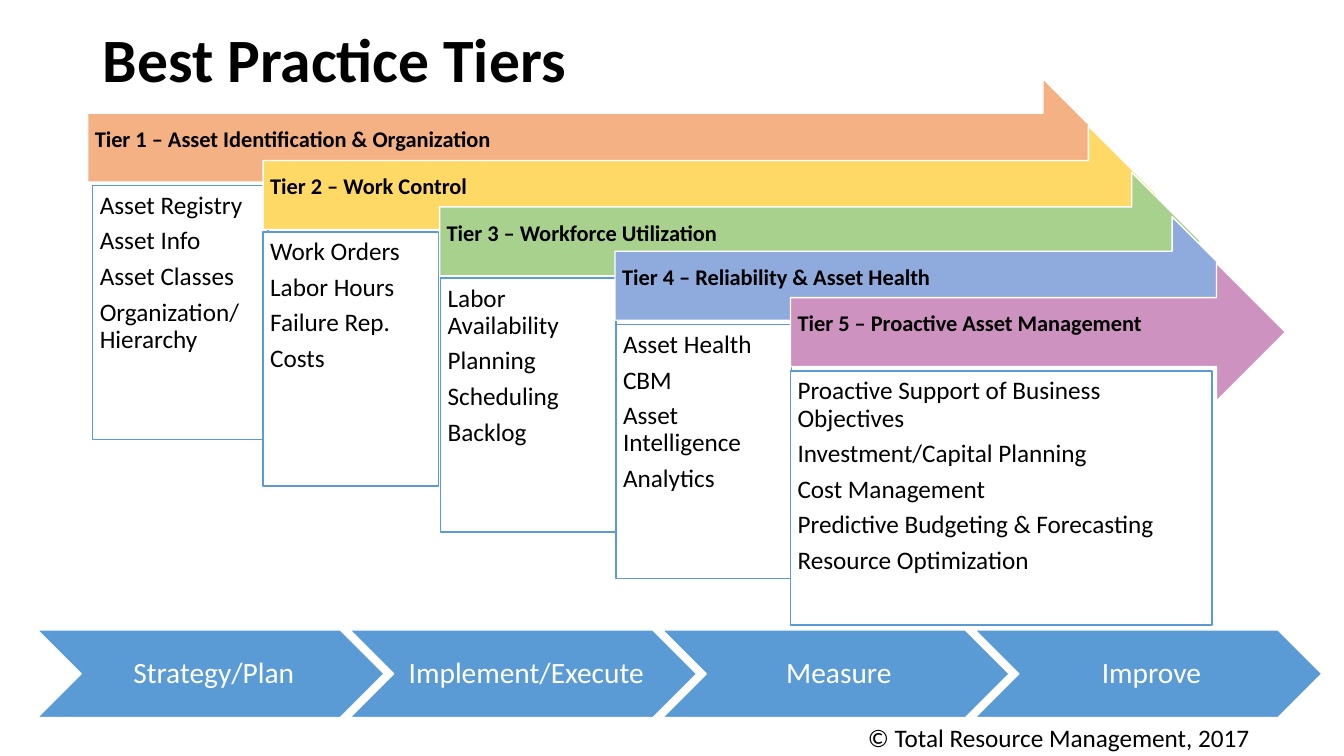
from pptx import Presentation
from pptx.dml.color import RGBColor
from pptx.enum.shapes import MSO_SHAPE as SHAPE
from pptx.enum.text import MSO_ANCHOR as ANCHOR, PP_ALIGN as ALIGN
from pptx.util import Inches, Pt

BLACK, WHITE, BLUE = "000000", "FFFFFF", "5B9BD5"
BOX_INSETS = (0.07, 0.07, 0.07, 0.07)

# heading, fill, arrow left, arrow top, arrow width, box left, box width, practices
TIERS = [
    ("Tier 1 – Asset Identification & Organization", "F4B183",
     0.87, 0.78, 10.16, 0.92, 1.74,
     ["Asset Registry", "Asset Info", "Asset Classes", "Organization/ Hierarchy"]),
    ("Tier 2 – Work Control", "FFD966",
     2.61, 1.25, 8.87, 2.61, 1.74,
     ["Work Orders", "Labor Hours", "Failure Rep.", "Costs"]),
    ("Tier 3 – Workforce Utilization", "A9D18E",
     4.36, 1.71, 7.55, 4.37, 1.74,
     ["Labor Availability", "Planning", "Scheduling", "Backlog"]),
    ("Tier 4 – Reliability & Asset Health", "8FAADC",
     6.1, 2.15, 6.21, 6.11, 1.74,
     ["Asset Health", "CBM", "Asset Intelligence", "Analytics"]),
    ("Tier 5 – Proactive Asset Management", "CE92C1",
     7.84, 2.61, 4.91, 7.84, 4.18,
     ["Proactive Support of Business Objectives", "Investment/Capital Planning",
      "Cost Management", "Predictive Budgeting & Forecasting",
      "Resource Optimization"]),
]
PHASES = ["Strategy/Plan", "Implement/Execute", "Measure", "Improve"]


def rgb(color):
    return RGBColor.from_string(color)


class Deck:
    font = "Calibri"

    def __init__(self, prs):
        self.slide = prs.slides.add_slide(prs.slide_layouts[6])

    def set_text(self, sp, lines, size, color=BLACK, bold=False, align=ALIGN.LEFT,
                 anchor=ANCHOR.TOP, insets=(0.1, 0.05, 0.1, 0.05),
                 spacing=0.9, after=0, wrap=True):
        """Fill a shape with one paragraph per line; insets run left, top, right, bottom."""
        tf = sp.text_frame
        tf.word_wrap = wrap
        tf.vertical_anchor = anchor
        (tf.margin_left, tf.margin_top,
         tf.margin_right, tf.margin_bottom) = map(Inches, insets)
        tf.text = "\n".join(lines)
        for p in tf.paragraphs:
            p.alignment = align
            p.line_spacing = spacing
            p.space_after = Pt(after)
            p.font.name = self.font
            p.font.size = Pt(size)
            p.font.bold = bold
            p.font.color.rgb = rgb(color)

    def text(self, x, y, w, h, line, size, **style):
        sp = self.slide.shapes.add_textbox(*map(Inches, (x, y, w, h)))
        self.set_text(sp, [line], size, **style)

    def shape(self, kind, x, y, w, h, fill, line, lines, size, **style):
        sp = self.slide.shapes.add_shape(kind, *map(Inches, (x, y, w, h)))
        sp.shadow.inherit = False
        sp.fill.solid()
        sp.fill.fore_color.rgb = rgb(fill)
        sp.line.color.rgb = rgb(line)
        sp.line.width = Pt(1)
        self.set_text(sp, lines, size, **style)


def main():
    prs = Presentation()
    prs.slide_width, prs.slide_height = Inches(13.33), Inches(7.5)
    deck = Deck(prs)

    deck.text(0.92, 0.21, 11.5, 0.83, "Best Practice Tiers", 44,
              bold=True, anchor=ANCHOR.MIDDLE)

    for i, (heading, fill, x, y, w, box_x, box_w, practices) in enumerate(TIERS):
        deck.shape(SHAPE.RIGHT_ARROW, x, y, w, 1.37, fill, WHITE, [heading], 16,
                   bold=True, anchor=ANCHOR.MIDDLE,
                   insets=(0.07, 0.07, 0.28, 0.22), after=5.5)
        deck.shape(SHAPE.RECTANGLE, box_x, 1.84 + 0.46 * i, box_w, 2.52, WHITE, BLUE,
                   practices, 18, insets=BOX_INSETS, after=6)

    for i, phase in enumerate(PHASES):
        deck.shape(SHAPE.CHEVRON, 0.37 + 3.1 * i, 6.25, 3.44, 0.87, BLUE, WHITE,
                   [phase], 21, color=WHITE, align=ALIGN.CENTER,
                   anchor=ANCHOR.MIDDLE, insets=(0.09, 0.03, 0.03, 0.03), after=7)

    deck.text(8.51, 7.12, 4.06, 0.4, "© Total Resource Management, 2017", 18,
              spacing=1.0, wrap=False)
    prs.save("out.pptx")


if __name__ == "__main__":
    main()
